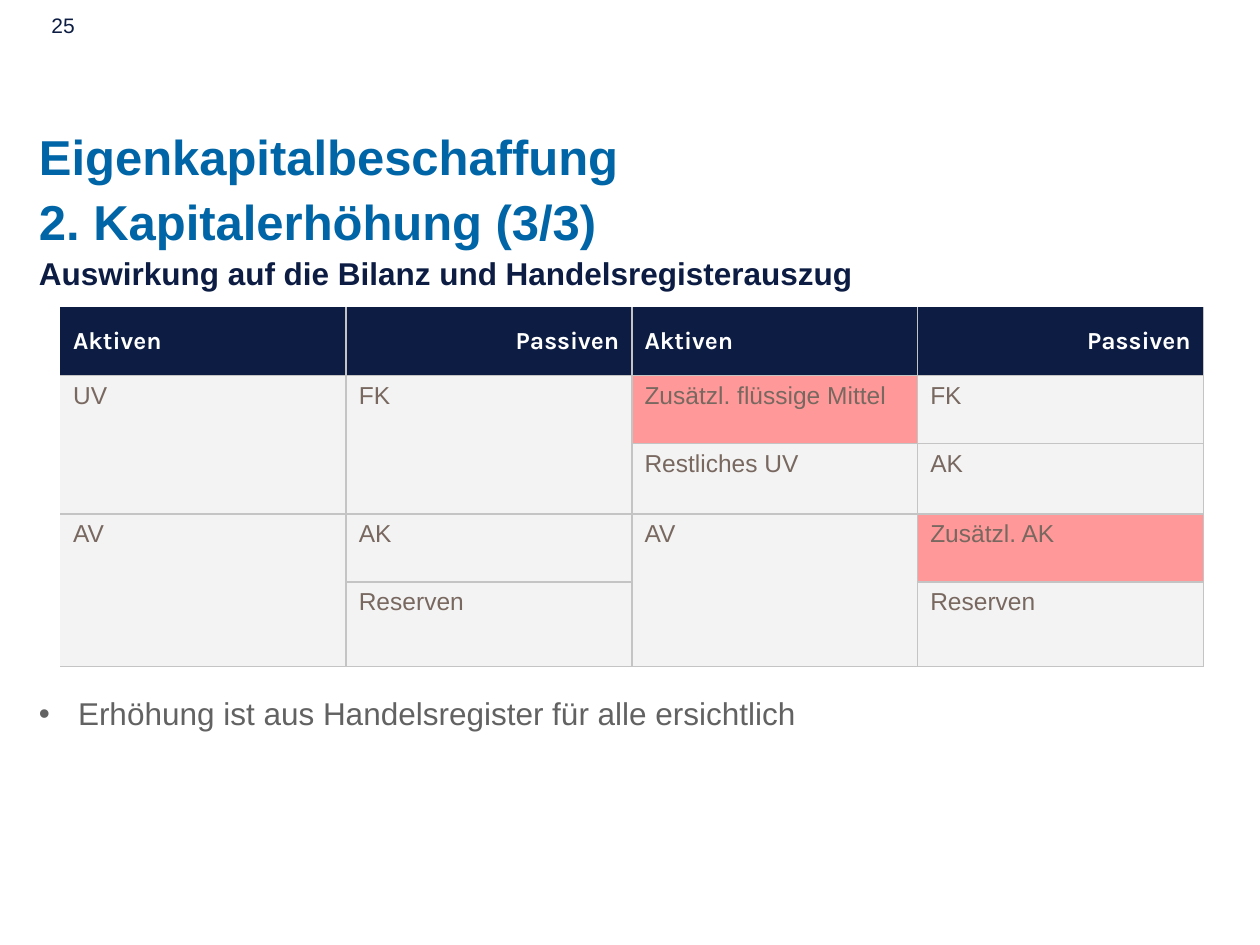
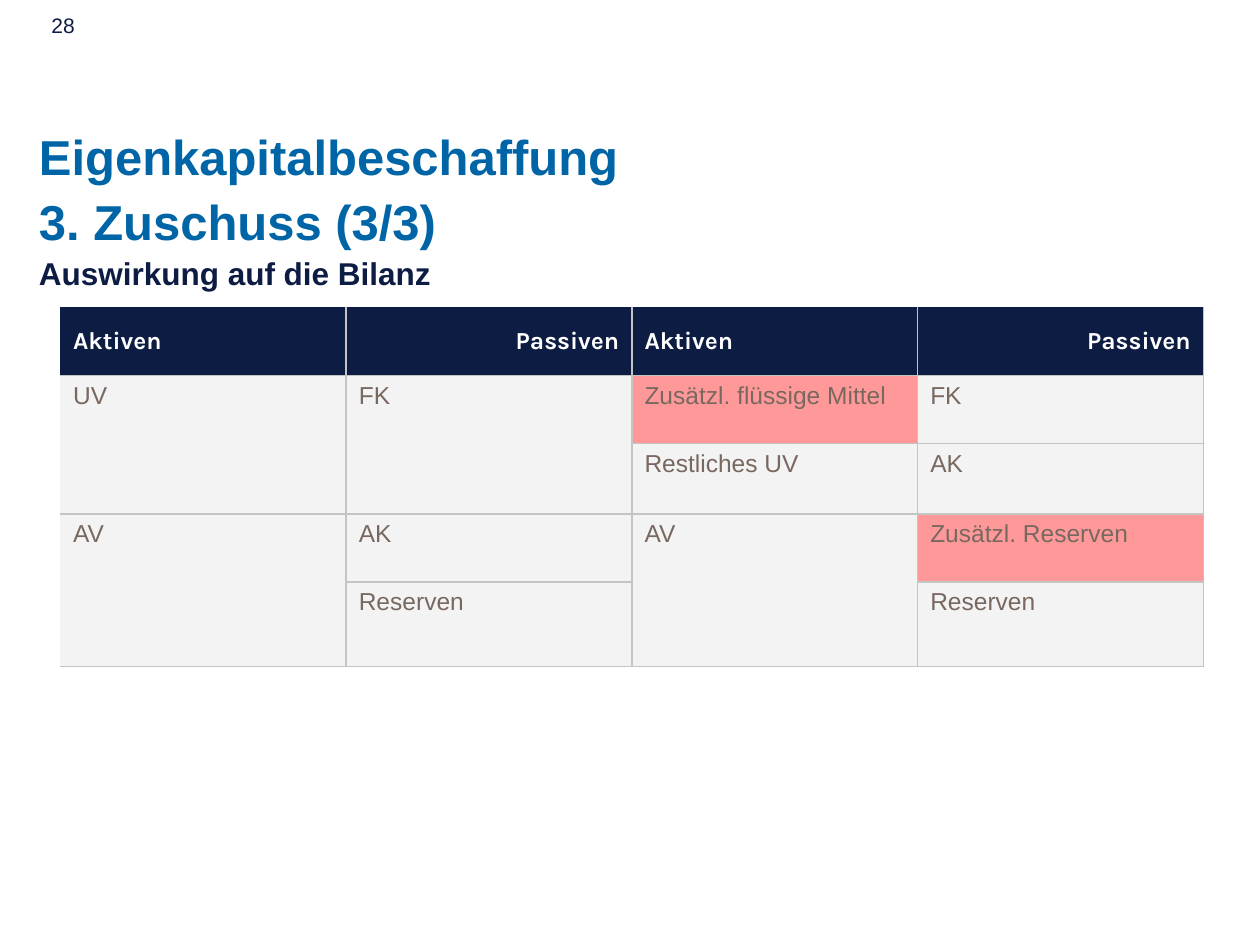
from dataclasses import dataclass
from typing import NamedTuple, Optional

from lxml import etree
from pptx import Presentation
from pptx import util as u
from pptx.dml.color import RGBColor
from pptx.enum import text
from pptx.oxml import ns

COLORS = {
    "navy": "0C1C43", "blue": "0065A6", "gray": "626262", "brown": "786860",
    "white": "FFFFFF", "pale": "F3F3F3", "red": "FF9999", "line": "C4C4C4",
}
GRID_COLUMNS, GRID_ROWS = 100, 75
UNIT = u.Inches(0.1)
LEFT, TEXT_WIDTH = 3.1, 93.7
TABLE_ROWS = (5.4, 5.4, 5.6, 5.4, 6.7)
TABLE_COLUMN = 22.68


class Area(NamedTuple):
    left: float
    top: float
    width: float
    height: float

    def lengths(self) -> list[int]:
        return [units(value) for value in self]


NUMBER_AREA = Area(LEFT, 0.5, 23.3, 2.9)
TITLE_AREA = Area(LEFT, 9.6, TEXT_WIDTH, 10.6)
SUBTITLE_AREA = Area(LEFT, 20.2, TEXT_WIDTH, 3)
NOTE_AREA = Area(LEFT, 55.1, TEXT_WIDTH, 3)
TABLE_AREA = Area(4.8, 24.4, 4 * TABLE_COLUMN, sum(TABLE_ROWS))


class Entry(NamedTuple):
    row: int
    column: int
    label: str
    row_span: int = 1
    fill: str = "pale"


@dataclass(frozen=True)
class BalanceSlide:
    number: int
    topic: str
    subtitle: str
    added_equity: str
    note: Optional[str] = None


SLIDES = (
    BalanceSlide(25, "2. Kapitalerhöhung (3/3)",
                 "Auswirkung auf die Bilanz und Handelsregisterauszug",
                 "Zusätzl. AK",
                 "Erhöhung ist aus Handelsregister für alle ersichtlich"),
    BalanceSlide(28, "3. Zuschuss (3/3)", "Auswirkung auf die Bilanz",
                 "Zusätzl. Reserven"),
)


def units(value: float) -> int:
    return round(value * UNIT)


def color(name: str) -> RGBColor:
    return RGBColor.from_string(COLORS[name])


def write(frame, content: str, *, size: float, ink: str, font: str = "Arial",
          bold: bool = False, align=text.PP_ALIGN.LEFT,
          spacing: float = 1.0, bullet: bool = False) -> None:
    paragraph = frame.paragraphs[0]
    paragraph.text = content
    paragraph.alignment = align
    paragraph.line_spacing = spacing
    if bullet:
        properties = paragraph._p.get_or_add_pPr()
        indent = units(3.1)
        properties.set("marL", str(indent))
        properties.set("indent", str(-indent))
        etree.SubElement(properties, ns.qn("a:buFont"), typeface="Arial")
        etree.SubElement(properties, ns.qn("a:buChar"), char="•")
    for run in paragraph.runs:
        run.font.name = font
        run.font.size = u.Pt(size)
        run.font.bold = bold
        run.font.color.rgb = color(ink)


def add_text(slide, area: Area, content: str, *, inset: bool = False,
             **formatting) -> None:
    frame = slide.shapes.add_textbox(*area.lengths()).text_frame
    frame.word_wrap = True
    if not inset:
        frame.margin_left = frame.margin_right = 0
        frame.margin_top = frame.margin_bottom = 0
    write(frame, content, **formatting)


def style_cell(cell, fill: str, hidden_edges: str) -> None:
    properties = cell._tc.get_or_add_tcPr()
    for edge in "LRTB":
        line = etree.SubElement(properties, ns.qn(f"a:ln{edge}"),
                                w=str(u.Pt(1)))
        if edge in hidden_edges:
            etree.SubElement(line, ns.qn("a:noFill"))
        else:
            solid = etree.SubElement(line, ns.qn("a:solidFill"))
            etree.SubElement(solid, ns.qn("a:srgbClr"), val=COLORS["line"])
    cell.fill.solid()
    cell.fill.fore_color.rgb = color(fill)


def add_balance_table(slide, added_equity: str) -> None:
    entries = (
        Entry(1, 0, "UV", 2), Entry(3, 0, "AV", 2),
        Entry(1, 1, "FK", 2), Entry(3, 1, "AK"), Entry(4, 1, "Reserven"),
        Entry(1, 2, "Zusätzl. flüssige Mittel", fill="red"),
        Entry(2, 2, "Restliches UV"), Entry(3, 2, "AV", 2),
        Entry(1, 3, "FK"), Entry(2, 3, "AK"),
        Entry(3, 3, added_equity, fill="red"), Entry(4, 3, "Reserven"),
    )
    table = slide.shapes.add_table(len(TABLE_ROWS), 4,
                                   *TABLE_AREA.lengths()).table
    table.first_row = table.horz_banding = False
    for column in table.columns:
        column.width = units(TABLE_COLUMN)
    for row, height in zip(table.rows, TABLE_ROWS):
        row.height = units(height)
    for column in range(4):
        header = table.cell(0, column)
        style_cell(header, "navy", "LT" if column == 0 else "T")
        header.vertical_anchor = text.MSO_ANCHOR.MIDDLE
        passive = column % 2 == 1
        write(header.text_frame, "Passiven" if passive else "Aktiven",
              size=14, ink="white", font="Karla", bold=True,
              align=text.PP_ALIGN.RIGHT if passive else text.PP_ALIGN.LEFT)
    for entry in entries:
        cell = table.cell(entry.row, entry.column)
        last_row = entry.row + entry.row_span - 1
        if entry.row_span > 1:
            cell.merge(table.cell(last_row, entry.column))
        for row in range(entry.row, last_row + 1):
            style_cell(table.cell(row, entry.column), entry.fill,
                       "L" if entry.column == 0 else "")
        write(cell.text_frame, entry.label, size=14, ink="brown")


def add_balance_slide(presentation, content: BalanceSlide) -> None:
    slide = presentation.slides.add_slide(presentation.slide_layouts[6])
    add_text(slide, SUBTITLE_AREA, content.subtitle,
             size=18, ink="navy", bold=True)
    add_text(slide, TITLE_AREA, f"Eigenkapitalbeschaffung\v{content.topic}",
             size=28, ink="blue", bold=True, spacing=1.1)
    add_text(slide, NUMBER_AREA, str(content.number), inset=True,
             size=12, ink="navy")
    add_balance_table(slide, content.added_equity)
    if content.note:
        add_text(slide, NOTE_AREA, content.note,
                 size=18, ink="gray", bullet=True)


def main() -> None:
    presentation = Presentation()
    presentation.slide_width = GRID_COLUMNS * UNIT
    presentation.slide_height = GRID_ROWS * UNIT
    for content in SLIDES:
        add_balance_slide(presentation, content)
    presentation.save("out.pptx")


if __name__ == "__main__":
    main()
